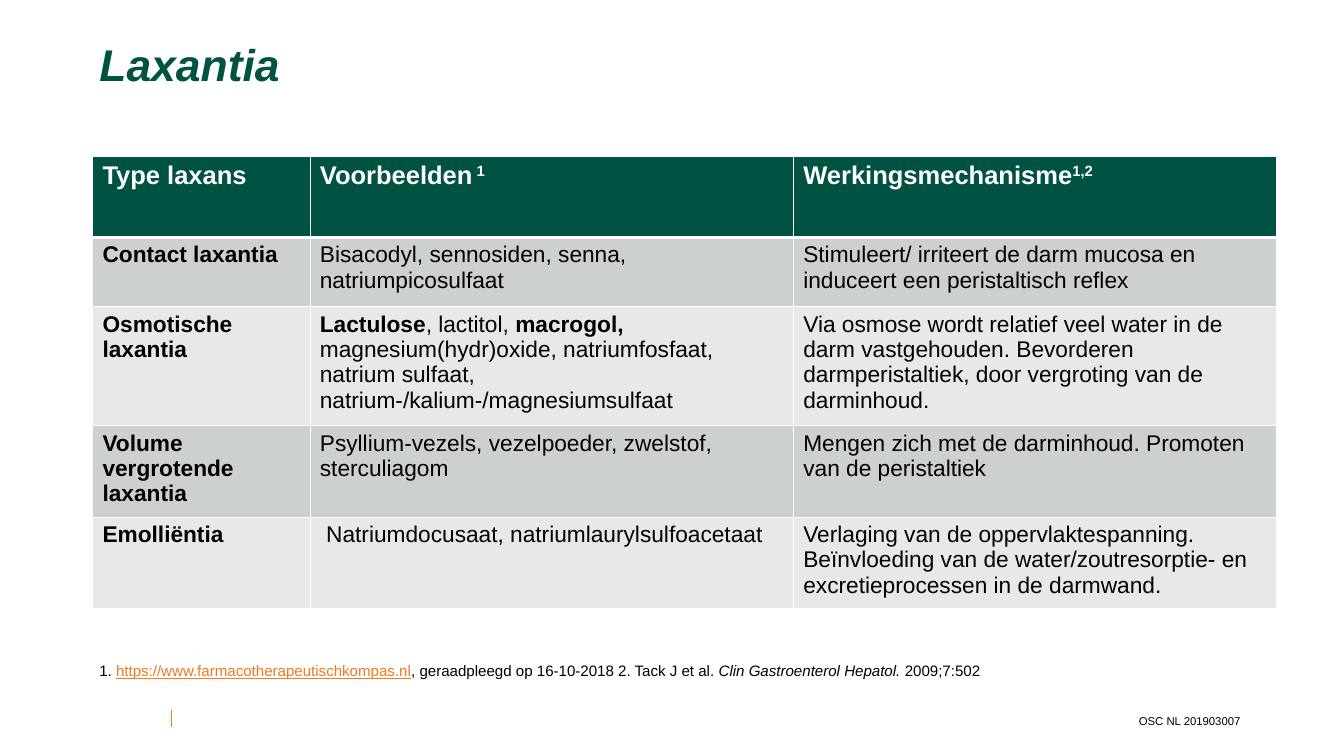
from pptx import Presentation
from pptx.dml.color import RGBColor
from pptx.enum.shapes import MSO_CONNECTOR
from pptx.enum.text import MSO_ANCHOR, PP_ALIGN
from pptx.oxml import parse_xml
from pptx.oxml.ns import nsdecls
from pptx.util import Pt

STRAIGHT = MSO_CONNECTOR.STRAIGHT
TOP, MIDDLE = MSO_ANCHOR.TOP, MSO_ANCHOR.MIDDLE
LEFT = PP_ALIGN.LEFT

WHITE = RGBColor(0xFF, 0xFF, 0xFF)
BLACK = RGBColor(0, 0, 0)
GREEN = RGBColor(0x00, 0x52, 0x43)
ORANGE = RGBColor(0xF4, 0x79, 0x1F)
DARK_BAND = RGBColor(0xCC, 0xD1, 0xCF)
LIGHT_BAND = RGBColor(0xE7, 0xE9, 0xE9)

BOLD = {"bold": True}
ITALIC = {"italic": True}
LINK = {"color": ORANGE, "underline": True}
RAISED = {"bold": True, "raised": True}

COLUMN_WIDTHS = (230, 511.5, 511.5)
ROW_HEIGHTS = (85.7, 73.4, 124.5, 95.8, 95.8)
HEADINGS = (
    [("Type laxans", BOLD)],
    [("Voorbeelden", BOLD), (" 1", RAISED)],
    [("Werkingsmechanisme", BOLD), ("1,2", RAISED)],
)
LAXATIVES = (
    ("Contact laxantia",
     [("Bisacodyl, sennosiden, senna, natriumpicosulfaat", {})],
     "Stimuleert/ irriteert de darm mucosa en induceert een peristaltisch reflex"),
    ("Osmotische laxantia",
     [("Lactulose", BOLD), (", lactitol, ", {}), ("macrogol, ", BOLD),
      ("magnesium(hydr)oxide, natriumfosfaat, natrium sulfaat, "
       "natrium-/kalium-/magnesiumsulfaat", {})],
     "Via osmose wordt relatief veel water in de darm vastgehouden. "
     "Bevorderen darmperistaltiek, door vergroting van de darminhoud."),
    ("Volume vergrotende laxantia",
     [("Psyllium-vezels, vezelpoeder, zwelstof, sterculiagom", {})],
     "Mengen zich met de darminhoud. Promoten van de peristaltiek"),
    ("Emolliëntia",
     [(" Natriumdocusaat, natriumlaurylsulfoacetaat", {})],
     "Verlaging van de oppervlaktespanning. Beïnvloeding van de "
     "water/zoutresorptie- en excretieprocessen in de darmwand."),
)
FOOTNOTE = [
    ("1. ", {}),
    ("https://www.farmacotherapeutischkompas.nl", LINK),
    (", geraadpleegd op 16-10-2018 2. Tack J et al. ", {}),
    ("Clin Gastroenterol Hepatol. ", ITALIC),
    ("2009;7:502", {}),
]


def write_spans(para, spans, size, color):
    para.alignment = LEFT
    for text, changes in spans:
        span = para.add_run()
        span.text = text
        values = {"name": "Arial", "size": Pt(size), "bold": False, "color": color, **changes}
        span.font.color.rgb = values.pop("color")
        if values.pop("raised", False):
            span.font._element.set("baseline", "30000")
        for name, value in values.items():
            setattr(span.font, name, value)


def place(shape, box):
    for name, value in zip(("left", "top", "width", "height"), box):
        setattr(shape, name, Pt(value))


def add_title(page, box):
    title = page.shapes.title
    place(title, box)
    frame = title.text_frame
    frame.vertical_anchor = TOP
    para = frame.paragraphs[0]
    para.line_spacing = 0.9
    write_spans(para, [("Laxantia", {**BOLD, **ITALIC})], 47, GREEN)


def add_text(page, box, spans, size, anchor, margins):
    frame = page.shapes.add_textbox(*map(Pt, box)).text_frame
    frame.word_wrap = True
    frame.vertical_anchor = anchor
    set_margins(frame, *margins)
    write_spans(frame.paragraphs[0], spans, size, BLACK)


def set_margins(holder, side, end):
    for name, value in {"left": side, "right": side, "top": end, "bottom": end}.items():
        setattr(holder, f"margin_{name}", Pt(value))


def add_borders(cell, top, bottom):
    properties = cell._tc.get_or_add_tcPr()
    for side, width in {"L": 1, "R": 1, "T": top, "B": bottom}.items():
        properties.append(parse_xml(
            f'<a:ln{side} {nsdecls("a")} w="{Pt(width)}"><a:solidFill>'
            f'<a:srgbClr val="{WHITE}"/></a:solidFill></a:ln{side}>'))


def add_laxative_table(page, box):
    rows = [HEADINGS] + [([(kind, BOLD)], examples, [(effect, {})])
                         for kind, examples, effect in LAXATIVES]
    table = page.shapes.add_table(len(rows), len(HEADINGS), *map(Pt, box)).table
    for column, width in zip(table.columns, COLUMN_WIDTHS):
        column.width = Pt(width)
    for index, (row, height, texts) in enumerate(zip(table.rows, ROW_HEIGHTS, rows)):
        row.height = Pt(height)
        heading = index == 0
        band = GREEN if heading else DARK_BAND if index % 2 else LIGHT_BAND
        for cell, spans in zip(row.cells, texts):
            set_margins(cell, 10.5, 5.25)
            add_borders(cell, 3 if index == 1 else 1, 3 if heading else 1)
            cell.fill.solid()
            cell.fill.fore_color.rgb = band
            write_spans(cell.text_frame.paragraphs[0], spans,
                        27 if heading else 24, WHITE if heading else BLACK)


def add_footer(page, box):
    left, top, width, height = box
    mark = page.shapes.add_connector(STRAIGHT, Pt(left), Pt(top + 1.5), Pt(left), Pt(top + 19))
    mark.line.color.rgb = ORANGE
    mark.line.width = Pt(1.75)
    mark._element.spPr.append(parse_xml(f'<a:effectLst {nsdecls("a")}/>'))
    code_width = 189.5
    add_text(page, (left + width - code_width, top, code_width, height),
             [("OSC NL 201903007", {})], 12, TOP, (10.5, 5.25))


def main():
    deck = Presentation()
    deck.slide_width, deck.slide_height = Pt(1422), Pt(800)
    page = deck.slides.add_slide(deck.slide_layouts[5])
    add_footer(page, (181.5, 750.2, 1202.5, 25))
    add_title(page, (98, 42.5, 1226, 82))
    add_laxative_table(page, (98, 165.6, sum(COLUMN_WIDTHS), sum(ROW_HEIGHTS)))
    add_text(page, (98, 661, 1182, 96.5), FOOTNOTE, 16, MIDDLE, (7.2, 3.6))
    deck.save("out.pptx")


if __name__ == "__main__":
    main()
